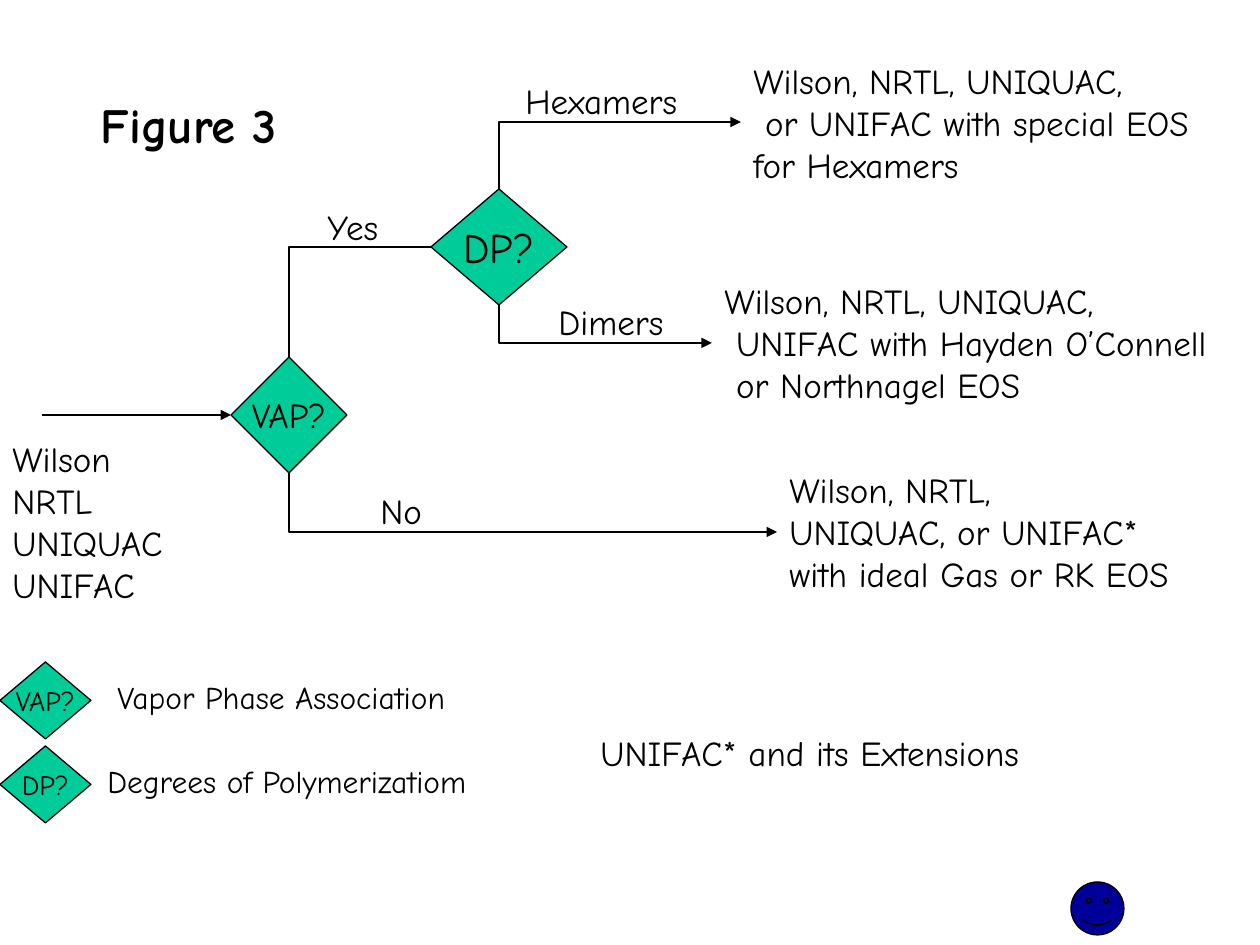
import pptx
import pptx.util
import pptx.dml.color
import pptx.enum.shapes
import pptx.enum.text
import pptx.oxml.ns
from lxml import etree

SCALE = 914400 / 126
FONT = "Comic Neue"
BLACK = pptx.dml.color.RGBColor(0x00, 0x00, 0x00)
GREEN = pptx.dml.color.RGBColor(0x00, 0xCC, 0x99)
NAVY = pptx.dml.color.RGBColor(0x00, 0x00, 0x99)
SHAPE = pptx.enum.shapes.MSO_SHAPE
CONNECTOR = pptx.enum.shapes.MSO_CONNECTOR
CENTER = pptx.enum.text.PP_ALIGN.CENTER
MIDDLE = pptx.enum.text.MSO_ANCHOR.MIDDLE
qn = pptx.oxml.ns.qn


def px(*values):
    return [pptx.util.Emu(round(v * SCALE)) for v in values]


def write(tf, lines, size, align=None, bold=None):
    for i, line in enumerate(lines):
        p = tf.add_paragraph() if i else tf.paragraphs[0]
        p.text = line
        p.alignment = align
        p.font.name = FONT
        p.font.size = pptx.util.Pt(size)
        p.font.bold = bold
        p.font.color.rgb = BLACK


def add_text(s, x, y, w, h, lines, size=20):
    tf = s.shapes.add_textbox(*px(x, y, w, h)).text_frame
    tf.word_wrap = False
    tf.auto_size = pptx.enum.text.MSO_AUTO_SIZE.SHAPE_TO_FIT_TEXT
    write(tf, lines, size)


def add_title(s, x, y, w, h, text):
    tf = s.shapes.add_textbox(*px(x, y, w, h)).text_frame
    tf.word_wrap = True
    tf.vertical_anchor = MIDDLE
    write(tf, [text], 28, CENTER, True)
    tf.paragraphs[0].line_spacing = 0.7


def add_filled(s, kind, x, y, w, h, color):
    sp = s.shapes.add_shape(kind, *px(x, y, w, h))
    sp.shadow.inherit = False
    sp.fill.solid()
    sp.fill.fore_color.rgb = color
    sp.line.color.rgb = BLACK
    sp.line.width = pptx.util.Pt(0.75)
    return sp


def add_decision(s, x, y, w, h, text, size):
    sp = add_filled(s, SHAPE.FLOWCHART_DECISION, x, y, w, h, GREEN)
    tf = sp.text_frame
    tf.word_wrap = False
    tf.vertical_anchor = MIDDLE
    write(tf, [text], size, CENTER)
    return sp


def add_line(s, kind, x1, y1, x2, y2, arrow=None):
    c = s.shapes.add_connector(kind, *px(x1, y1, x2, y2))
    c.line.color.rgb = BLACK
    c.line.width = pptx.util.Pt(0.75)
    props = c._element.spPr
    if arrow:
        etree.SubElement(props.find(qn("a:ln")), qn(arrow), type="triangle")
    etree.SubElement(props, qn("a:effectLst"))
    return c


def add_elbow(s, x1, y1, x2, y2, arrow="a:headEnd"):
    c = add_line(s, CONNECTOR.ELBOW, x1, y1, x2, y2, arrow)
    c._element.spPr.find(qn("a:prstGeom")).set("prst", "bentConnector2")


def main():
    prs = pptx.Presentation()
    prs.slide_width, prs.slide_height = px(1260, 945)
    s = prs.slides.add_slide(prs.slide_layouts[6])

    vap = add_decision(s, 231, 357, 116, 116, "VAP?", 20)
    add_decision(s, 431, 189, 136, 116, "DP?", 24)

    add_elbow(s, 431, 247, 289, 357, arrow=None)
    for x1, y1, x2, y2 in [
        (777, 532, 289, 473),
        (741, 122, 499, 189),
        (712, 343, 499, 305),
    ]:
        add_elbow(s, x1, y1, x2, y2)
    entry = add_line(s, CONNECTOR.STRAIGHT, 42, 415, 231, 415, "a:tailEnd")
    entry.end_connect(vap, 1)

    for x, y, w, label in [
        (315, 199, 84, "Yes"),
        (368, 483, 72, "No"),
        (513, 73, 190, "Hexamers"),
        (546, 294, 141, "Dimers"),
        (588, 725, 504, "UNIFAC* and its Extensions"),
    ]:
        add_text(s, x, y, w, 54, [label])

    add_text(s, 0, 431, 202, 180, ["Wilson", "NRTL", "UNIQUAC", "UNIFAC"])
    for x, y, w, lines in [
        (777, 462, 437, ["Wilson, NRTL,", "UNIQUAC, or UNIFAC*",
                         "with ideal Gas or RK EOS"]),
        (712, 273, 548, ["Wilson, NRTL, UNIQUAC,",
                         " UNIFAC with Hayden O’Connell",
                         " or Northnagel EOS"]),
        (741, 53, 519, ["Wilson, NRTL, UNIQUAC,",
                        " or UNIFAC with special EOS",
                        "for Hexamers"]),
    ]:
        add_text(s, x, y, w, 139, lines)

    for y, key, x, w, meaning in [
        (662, "VAP?", 105, 381, "Vapor Phase Association"),
        (746, "DP?", 95, 420, "Degrees of Polymerizatiom"),
    ]:
        add_decision(s, 0, y, 91, 77, key, 16)
        add_text(s, x, y + 10, w, 50, [meaning], 18)

    add_title(s, 0, 73, 378, 116, "Figure 3")
    add_filled(s, SHAPE.SMILEY_FACE, 1071, 882, 53, 53, NAVY)
    prs.save("out.pptx")


if __name__ == "__main__":
    main()
